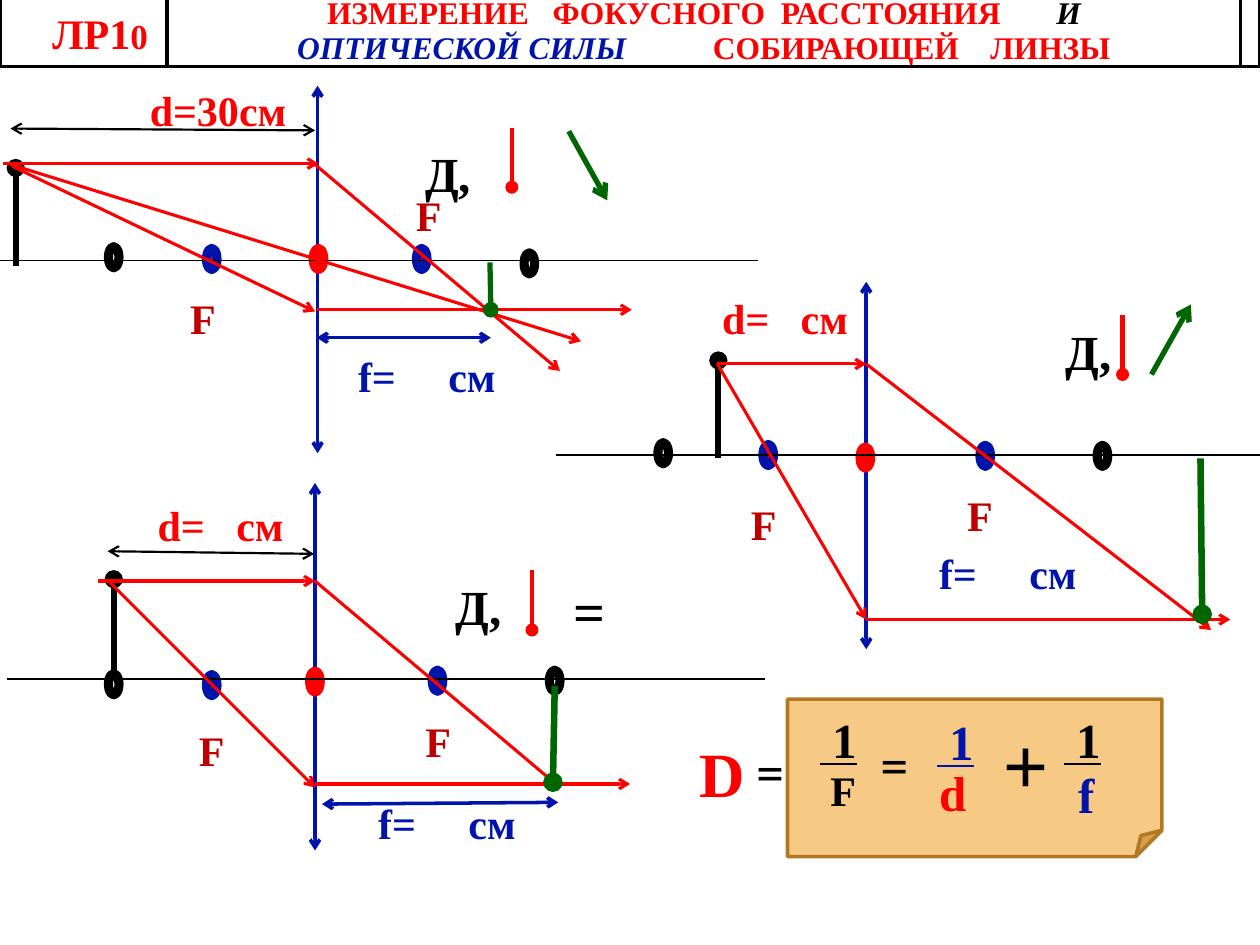
from dataclasses import dataclass

from lxml import etree
from pptx import Presentation
from pptx.dml.color import RGBColor
from pptx.enum.shapes import MSO_CONNECTOR, MSO_SHAPE
from pptx.enum.text import PP_ALIGN
from pptx.oxml.ns import qn
from pptx.util import Pt

STRAIGHT = MSO_CONNECTOR.STRAIGHT
OVAL = MSO_SHAPE.OVAL
FOLDED = MSO_SHAPE.FOLDED_CORNER
CENTER = PP_ALIGN.CENTER


@dataclass(frozen=True)
class Theme:
    black: str = "000000"
    red: str = "FF0000"
    dark_red: str = "C00000"
    blue: str = "0014AC"
    green: str = "006600"
    note: str = "F0A22E"
    note_edge: str = "B27822"
    serif: str = "Times New Roman"
    sans: str = "Calibri"
    plain: str = "Arial"
    heading: int = 18
    small: int = 20
    label: int = 24
    sign: int = 28
    equal: int = 32
    power: int = 36
    plus: int = 44


theme = Theme()


def write(para, text, size=theme.label, color=theme.black, font=theme.serif,
          bold=True, italic=False, underline=False):
    span = para.add_run()
    span.text = text
    span.font.size = Pt(size)
    span.font.name = font
    span.font.bold = bold
    span.font.italic = italic
    span.font.underline = underline
    span.font.color.rgb = RGBColor.from_string(color)


def draw_line(points, color, width, head=None, tail=None):
    line = page.shapes.add_connector(STRAIGHT, *[Pt(value) for value in points])
    line.line.color.rgb = RGBColor.from_string(color)
    line.line.width = Pt(width)
    outline = line.line._get_or_add_ln()
    for tag, end in (("a:headEnd", head), ("a:tailEnd", tail)):
        if end:
            etree.SubElement(outline, qn(tag), type=end)
    etree.SubElement(line._element.spPr, qn("a:effectLst"))


deck = Presentation()
deck.slide_width, deck.slide_height = Pt(720), Pt(540)
page = deck.slides.add_slide(deck.slide_layouts[6])

frame = page.shapes.add_table(1, 3, 0, Pt(-2), Pt(720), Pt(35))
table = frame.table
table.first_row = table.horz_banding = False
for column, width in zip(table.columns, (95.5, 613.5, 11)):
    column.width = Pt(width)
for cell in table.rows[0].cells:
    cell.fill.background()
    cell.margin_left = cell.margin_right = Pt(3.6)
    cell.margin_top = cell.margin_bottom = 0
    properties = cell._tc.get_or_add_tcPr()
    for index, side in enumerate(("a:lnL", "a:lnR", "a:lnT", "a:lnB")):
        border = etree.Element(qn(side), w=str(Pt(2.25)))
        paint = etree.SubElement(border, qn("a:solidFill"))
        etree.SubElement(paint, qn("a:srgbClr"), val=theme.black)
        properties.insert(index, border)

number, heading = table.cell(0, 0), table.cell(0, 1)
number.margin_left, number.margin_top = Pt(30), Pt(9)
write(number.text_frame.paragraphs[0], "ЛР1", color=theme.red)
write(number.text_frame.paragraphs[0], "0", size=theme.small, color=theme.red)
first = heading.text_frame.paragraphs[0]
second = heading.text_frame.add_paragraph()
first.alignment = second.alignment = CENTER
write(first, "ИЗМЕРЕНИЕ   ФОКУСНОГО  РАССТОЯНИЯ       ", size=theme.heading, color=theme.red)
write(first, "И", size=theme.heading, italic=True)
write(second, "ОПТИЧЕСКОЙ СИЛЫ", size=theme.heading, color=theme.blue, italic=True)
write(second, "           СОБИРАЮЩЕЙ    ЛИНЗЫ", size=theme.heading, color=theme.red)

diagrams = [
    dict(lens=(181.5, 49), axis=(0, 149), center=(182, 148),
         focuses=[(121, 148), (241, 148)], doubles=[(65, 147), (302.5, 150.5)],
         candle=(9, 96),
         rays=[(2, 93.5, 182, 93.5), (180, 94, 320, 212), (7, 95, 180, 178),
               (181, 177, 361, 177), (6, 94, 332, 195)],
         image=(280, 150, 280.5, 177), image_width=3, pin=(292.5, 73)),
    dict(lens=(180, 276), axis=(4, 388), center=(180, 389.5),
         focuses=[(121, 391.5), (250, 389)], doubles=[(65, 391), (317, 389)],
         candle=(65, 331),
         rays=[(56, 332, 180, 332), (180, 332, 320, 450), (62, 332, 180, 450),
               (180, 448, 360, 448)],
         image=(317, 392, 316, 447), image_width=3.75, pin=(304, 326)),
    dict(lens=(495, 161), axis=(317.5, 260), center=(494.5, 261.5),
         focuses=[(439, 260), (563, 260.5)], doubles=[(379, 259), (630, 260.5)],
         candle=(410.5, 206),
         rays=[(410, 208, 495, 208), (495, 208, 692, 360), (410, 208, 495, 354),
               (495, 354, 703, 354)],
         image=(686, 262, 687, 351), image_width=3.75, pin=(641.5, 180)),
]
for diagram in diagrams:
    x, y = diagram["lens"]
    draw_line((x, y, x, y + 210), theme.blue, 2, "arrow", "arrow")
    dots = [(diagram["center"], theme.red, theme.red)]
    dots += [(spot, theme.red, theme.blue) for spot in diagram["focuses"]]
    dots += [(spot, None, theme.black) for spot in diagram["doubles"]]
    for (x, y), fill, edge in dots:
        dot = page.shapes.add_shape(OVAL, Pt(x - 3), Pt(y - 6), Pt(6), Pt(12))
        dot.shadow.inherit = False
        if fill:
            dot.fill.solid()
            dot.fill.fore_color.rgb = RGBColor.from_string(fill)
        else:
            dot.fill.background()
        dot.line.color.rgb = RGBColor.from_string(edge)
        dot.line.width = Pt(5.25)
    x, y = diagram["axis"]
    draw_line((x, y, x + 433, y), theme.black, 0.79)
    x, y = diagram["candle"]
    draw_line((x, y, x, y + 56), theme.black, 3.5, head="oval")
    for ray in diagram["rays"]:
        draw_line(ray, theme.red, 1.75, tail="arrow")
    draw_line(diagram["image"], theme.green, diagram["image_width"], tail="oval")
    x, y = diagram["pin"]
    draw_line((x, y, x, y + 34), theme.red, 2.5, tail="oval")

for arrow in ((325, 75, 347, 114.5), (658, 214, 680.5, 174)):
    draw_line(arrow, theme.green, 3, tail="arrow")
for points, color, width in [
    ((6, 73.5, 180, 74.5), theme.black, 1.25),
    ((61.5, 315, 179.5, 316.5), theme.black, 1.25),
    ((181, 193, 280.5, 193), theme.blue, 2),
    ((184, 459.5, 319, 458.5), theme.blue, 2),
]:
    draw_line(points, color, width, "arrow", "arrow")

note = page.shapes.add_shape(FOLDED, Pt(450), Pt(399.5), Pt(214), Pt(90))
note.shadow.inherit = False
note.fill.solid()
note.fill.fore_color.rgb = RGBColor.from_string(theme.note)
shade = note._element.spPr.find(qn("a:solidFill"))[0]
etree.SubElement(shade, qn("a:alpha"), val="58000")
note.line.color.rgb = RGBColor.from_string(theme.note_edge)
note.line.width = Pt(2)

sign = dict(size=theme.sign)
focus = dict(color=theme.dark_red)
distance = dict(color=theme.red)
image_distance = dict(color=theme.blue)
fraction = dict(size=theme.sign, underline=True)
equal = dict(size=theme.equal, font=theme.sans, bold=False)
labels = [("Д,", x, y, 50, 41, sign) for x, y in ((236, 78.5), (253.5, 326), (602, 180))]
labels += [("F", x, y, 34, 36, focus) for x, y in (
    (101.5, 163.5), (230.5, 105), (236, 405.5), (106.5, 410.5), (422, 281.5), (545.5, 276))]
labels += [("f=     см", x, y, 106, 36, image_distance) for x, y in (
    (197.5, 196.5), (209, 452), (529.5, 309.5))]
labels += [("d=   см", x, y, 96, 36, distance) for x, y in ((83, 282), (405.5, 163.5))]
labels += [
    ("d=30см", 78.5, 44.5, 96, 36, distance),
    ("=", 320.5, 326, 50, 46, dict(size=theme.equal)),
    ("F", 467.5, 433.5, 39, 40, {}),
    (" 1", 461.5, 402, 40, 41, fraction),
    ("=", 496, 413.5, 46, 26, equal),
    (" 1", 528.5, 403, 40, 41, dict(fraction, color=theme.blue)),
    ("d", 530, 432, 40, 41, dict(sign, color=theme.red)),
    ("+", 566.5, 406, 46, 26, dict(size=theme.plus, font=theme.plain, bold=False)),
    ("f", 609, 433.5, 38, 40, dict(sign, color=theme.blue)),
    (" 1", 601, 402, 40, 41, fraction),
    ("D", 392.5, 416, 40, 51, dict(size=theme.power, color=theme.red)),
    ("=", 425, 417.5, 46, 40, equal),
]
for text, x, y, width, height, style in labels:
    box = page.shapes.add_textbox(Pt(x), Pt(y), Pt(width), Pt(height))
    box.text_frame.word_wrap = True
    write(box.text_frame.paragraphs[0], text, **style)

deck.save("out.pptx")
